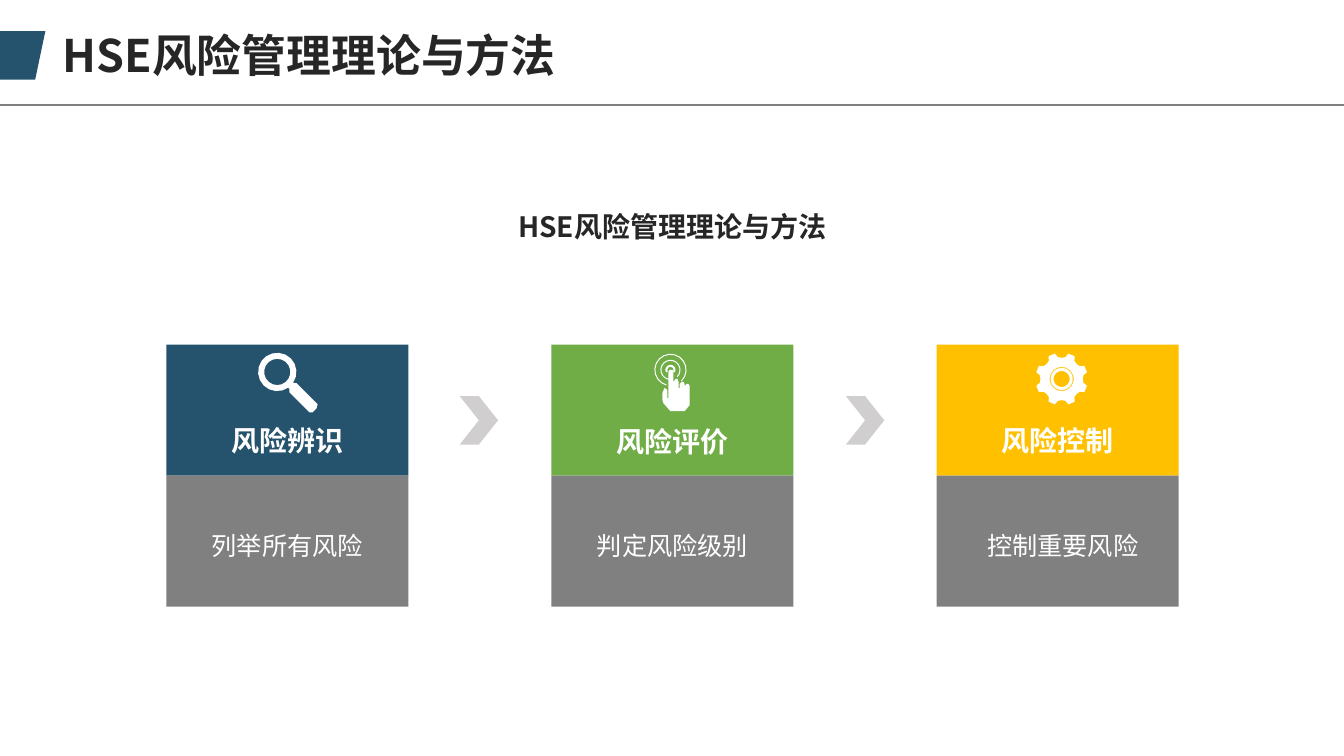
from math import cos, radians, sin

from pptx import Presentation
from pptx.dml.color import RGBColor
from pptx.enum.shapes import MSO_CONNECTOR, MSO_SHAPE as SHAPE
from pptx.enum.text import MSO_ANCHOR, PP_ALIGN
from pptx.oxml.ns import qn
from pptx.util import Inches, Pt
from lxml.etree import SubElement

FONT = "Noto Sans CJK SC"
NAVY = RGBColor(0x25, 0x53, 0x6D)
GREEN = RGBColor(0x70, 0xAD, 0x47)
AMBER = RGBColor(0xFF, 0xC0, 0x00)
GRAY = RGBColor(0x80, 0x80, 0x80)
LIGHT = RGBColor(0xD0, 0xCE, 0xCE)
DARK = RGBColor(0x26, 0x26, 0x26)
WHITE = RGBColor(0xFF, 0xFF, 0xFF)

TITLE = "HSE风险管理理论与方法"
# label, label top, detail, detail shift to the right, header colour
STEPS = [
    ("风险辨识", 4.15, "列举所有风险", 0, NAVY),
    ("风险评价", 4.16, "判定风险级别", 0, GREEN),
    ("风险控制", 4.15, "控制重要风险", 0.05, AMBER),
]
CARD_LEFT, CARD_TOP, CARD_W, CARD_H, PITCH = 1.65, 3.42, 2.4, 1.3, 3.82
LABEL_W, DETAIL_W = 1.32, 1.72

LENS = (2.75, 3.69)
TOUCH = (6.65, 3.67)
GEAR = (10.53, 3.76)
HANDLE = [
    (2.94, 3.8), (3.15, 4.01), (3.14, 4.05), (3.1, 4.09), (3.07, 4.09),
    (2.87, 3.89), (2.87, 3.86),
]
HAND = [
    (6.63, 3.69), (6.64, 3.67), (6.67, 3.67), (6.68, 3.69), (6.68, 3.79),
    (6.7, 3.76), (6.72, 3.76), (6.73, 3.79), (6.73, 3.85), (6.74, 3.85),
    (6.74, 3.81), (6.76, 3.79), (6.78, 3.79), (6.79, 3.81), (6.79, 3.83),
    (6.81, 3.81), (6.83, 3.81), (6.84, 3.83), (6.84, 4.02), (6.79, 4.08),
    (6.65, 4.08), (6.58, 4), (6.57, 3.97), (6.57, 3.9), (6.59, 3.85),
    (6.61, 3.86), (6.62, 3.88), (6.62, 3.95), (6.63, 3.95),
]


def style_text(tf, size, color, bold):
    p = tf.paragraphs[0]
    for r in p.runs:
        r.font.size, r.font.bold, r.font.name = Pt(size), bold, FONT
        r.font.color.rgb = color
        SubElement(r.font._element, qn("a:ea")).set("typeface", FONT)
    return p


def add_text(slide, text, x, y, w, h, size, color, bold=False):
    tf = slide.shapes.add_textbox(Inches(x), Inches(y), Inches(w), Inches(h)).text_frame
    tf.text = text
    tf.word_wrap = False
    style_text(tf, size, color, bold).alignment = PP_ALIGN.CENTER


def paint(sp, color):
    sp.shadow.inherit = False
    sp.fill.solid()
    sp.fill.fore_color.rgb = color
    sp.line.fill.background()
    return sp


def add_shape(slide, kind, x, y, w, h, color):
    sp = slide.shapes.add_shape(kind, Inches(x), Inches(y), Inches(w), Inches(h))
    return paint(sp, color)


def polar(center, radius, degrees):
    """Point at an angle measured clockwise from the top."""
    a = radians(degrees)
    return center[0] + radius * sin(a), center[1] - radius * cos(a)


def arc(center, radius, start=0, end=340):
    return [polar(center, radius, a) for a in range(start, end + 1, 20)]


def add_icon(slide, contours):
    """White freeform in which an inner contour cuts a hole in the one around it."""
    contours = [[(Inches(x), Inches(y)) for x, y in c] for c in contours]
    builder = slide.shapes.build_freeform(*contours[0][0])
    for i, points in enumerate(contours):
        if i:
            builder.move_to(*points[0])
        builder.add_line_segments(points[1:], close=True)
    paint(builder.convert_to_shape(), WHITE)


def add_magnifier(slide):
    add_icon(slide, [arc(LENS, 0.19, 145, 485) + HANDLE, arc(LENS, 0.13)])


def add_touch(slide):
    rings = [(0.16, 0.15, 195, 495), (0.1, 0.09, 195, 495), (0.05, 0.03, 240, 480)]
    add_icon(slide, [HAND] + [
        arc(TOUCH, outer, start, end) + arc(TOUCH, inner, start, end)[::-1]
        for outer, inner, start, end in rings])


def add_gear(slide):
    rim = [polar(GEAR, r, valley + a) for valley in range(0, 360, 45)
           for a, r in [(-10, 0.22), (0, 0.21), (10, 0.22), (15, 0.26), (30, 0.26)]]
    add_icon(slide, [rim] + [arc(GEAR, r) for r in (0.12, 0.11, 0.08)])


def main():
    prs = Presentation()
    prs.slide_width, prs.slide_height = Inches(13.33), Inches(7.5)
    slide = prs.slides.add_slide(prs.slide_layouts[5])

    title = slide.shapes.title
    title.left, title.top = Inches(0.52), Inches(0.22)
    title.width, title.height = Inches(5.36), Inches(0.64)
    tf = title.text_frame
    tf.text = TITLE
    tf.vertical_anchor = MSO_ANCHOR.TOP
    style_text(tf, 32, DARK, True).alignment = PP_ALIGN.LEFT

    tab = add_shape(slide, SHAPE.PARALLELOGRAM, -0.22, 0.31, 0.67, 0.48, NAVY)
    tab.adjustments[0] = 0.21
    rule = slide.shapes.add_connector(
        MSO_CONNECTOR.STRAIGHT, 0, Inches(1.04), prs.slide_width, Inches(1.04))
    rule.line.color.rgb = GRAY
    rule.line.width = Pt(1.75)
    SubElement(rule._element.spPr, qn("a:effectLst"))

    add_text(slide, TITLE, 5, 2.03, 3.34, 0.44, 20, DARK, True)

    for i, (label, label_top, detail, shift, color) in enumerate(STEPS):
        x = CARD_LEFT + i * PITCH
        mid = x + CARD_W / 2
        add_shape(slide, SHAPE.RECTANGLE, x, CARD_TOP, CARD_W, CARD_H, color)
        add_shape(slide, SHAPE.RECTANGLE, x, CARD_TOP + CARD_H, CARD_W, CARD_H, GRAY)
        add_text(slide, label, mid - LABEL_W / 2, label_top, LABEL_W, 0.44, 20, WHITE, True)
        add_text(slide, detail, mid - DETAIL_W / 2 + shift, 5.21, DETAIL_W, 0.4, 18, WHITE)
        if i < len(STEPS) - 1:
            add_shape(slide, SHAPE.CHEVRON, 4.56 + i * 3.83, 3.93, 0.38, 0.48, LIGHT)

    add_magnifier(slide)
    add_touch(slide)
    add_gear(slide)
    prs.save("out.pptx")


if __name__ == "__main__":
    main()
